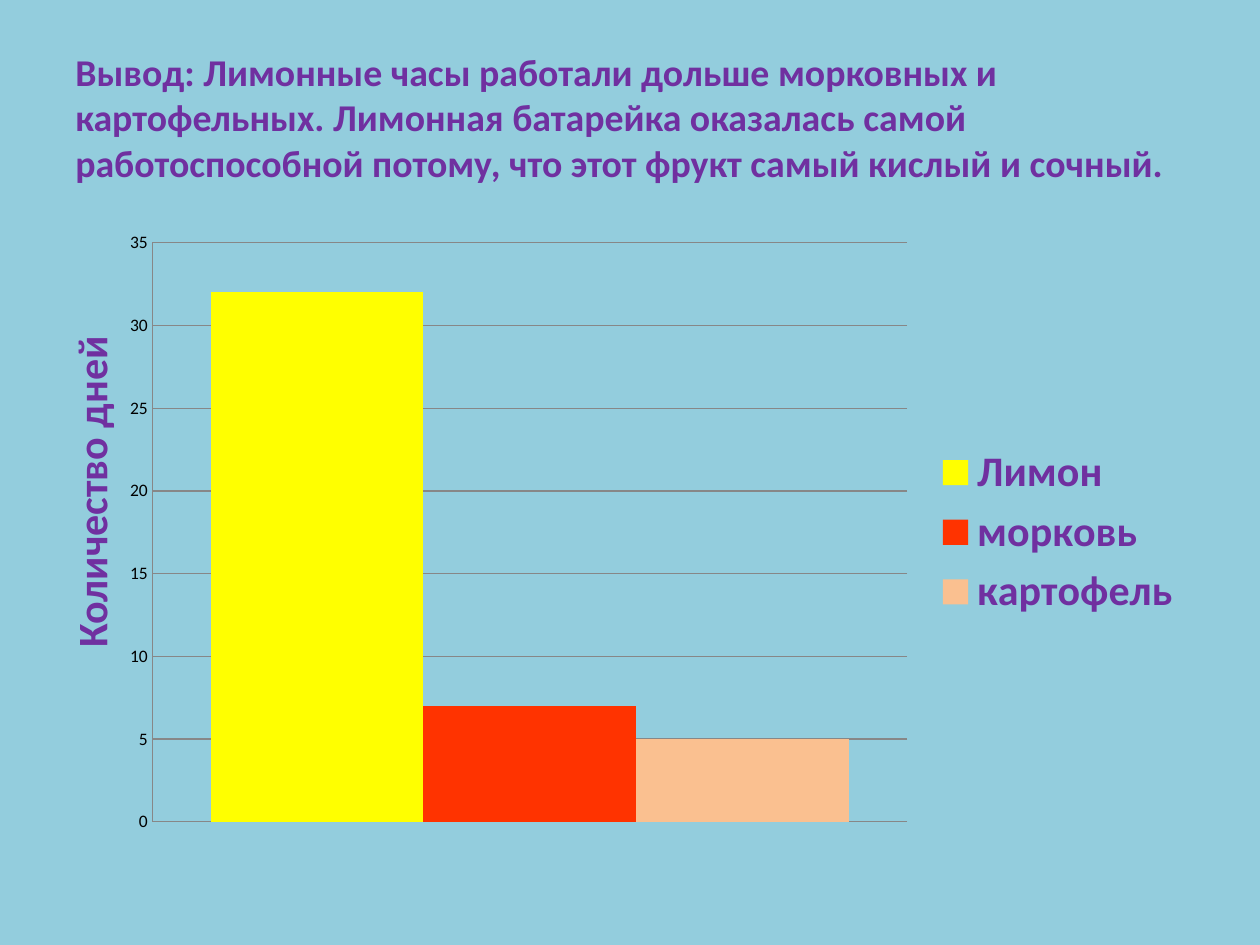
from pptx import Presentation
from pptx.chart.data import CategoryChartData
from pptx.dml.color import RGBColor
from pptx.enum.chart import XL_CHART_TYPE, XL_LEGEND_POSITION, XL_TICK_MARK
from pptx.enum.text import MSO_ANCHOR, PP_ALIGN
from pptx.util import Inches, Pt

PURPLE = "7030A0"
GRID = "878787"
DAYS = [("Лимон", 32, "FFFF00"), ("морковь", 7, "FF3300"), ("картофель", 5, "FAC090")]


def color(value):
    return RGBColor.from_string(value)


def set_font(font, size, hex_color, bold=False):
    for name, value in {"name": "Calibri", "size": Pt(size), "bold": bold}.items():
        setattr(font, name, value)
    font.color.rgb = color(hex_color)


def add_text(s, box, text, size, align=PP_ALIGN.LEFT, anchor=MSO_ANCHOR.TOP):
    tf = s.shapes.add_textbox(*map(Inches, box)).text_frame
    for name, value in {"word_wrap": True, "vertical_anchor": anchor}.items():
        setattr(tf, name, value)
    p = tf.paragraphs[0]
    p.alignment = align
    r = p.add_run()
    r.text = text
    set_font(r.font, size, PURPLE, True)
    return tf


def add_title(s, box):
    add_text(s, box, "Вывод: Лимонные часы работали дольше морковных и картофельных. "
             "Лимонная батарейка оказалась самой работоспособной потому, "
             "что этот фрукт самый кислый и сочный.", 21.6, anchor=MSO_ANCHOR.MIDDLE)


def add_axis_label(s, box):
    tf = add_text(s, box, "Количество дней", 24, PP_ALIGN.CENTER)
    tf._txBody.bodyPr.set("vert", "vert270")


def add_days_chart(s, box):
    data = CategoryChartData()
    data.categories = ["1"]
    for name, days, _ in DAYS:
        data.add_series(name, [days])
    chart = s.shapes.add_chart(XL_CHART_TYPE.COLUMN_CLUSTERED, *map(Inches, box), data).chart
    chart.has_title = False
    set_font(chart.font, 10, "000000")

    chart.has_legend = True
    legend = chart.legend
    legend.position = XL_LEGEND_POSITION.RIGHT
    legend.include_in_layout = False
    set_font(legend.font, 24, PURPLE, True)

    plot = chart.plots[0]
    for name, value in {"gap_width": 55, "overlap": 0, "vary_by_categories": False}.items():
        setattr(plot, name, value)
    for series, (_, _, fill) in zip(plot.series, DAYS):
        series.format.fill.solid()
        series.format.fill.fore_color.rgb = color(fill)

    chart.category_axis.visible = False
    axis = chart.value_axis
    limits = {"minimum_scale": 0, "maximum_scale": 35, "major_unit": 5,
              "has_major_gridlines": True, "major_tick_mark": XL_TICK_MARK.NONE}
    for name, value in limits.items():
        setattr(axis, name, value)
    for line in (axis.format.line, axis.major_gridlines.format.line):
        line.color.rgb = color(GRID)
        line.width = Pt(0.75)


def main():
    prs = Presentation()
    prs.slide_width, prs.slide_height = Inches(10), Inches(7.5)
    s = prs.slides.add_slide(prs.slide_layouts[6])
    s.background.fill.solid()
    s.background.fill.fore_color.rgb = color("93CDDD")
    add_title(s, (0.5, 0.3, 9, 1.25))
    add_days_chart(s, (0.86, 1.75, 8.64, 4.95))
    add_axis_label(s, (0.47, 1.56, 0.61, 4.69))
    prs.save("out.pptx")


if __name__ == "__main__":
    main()
